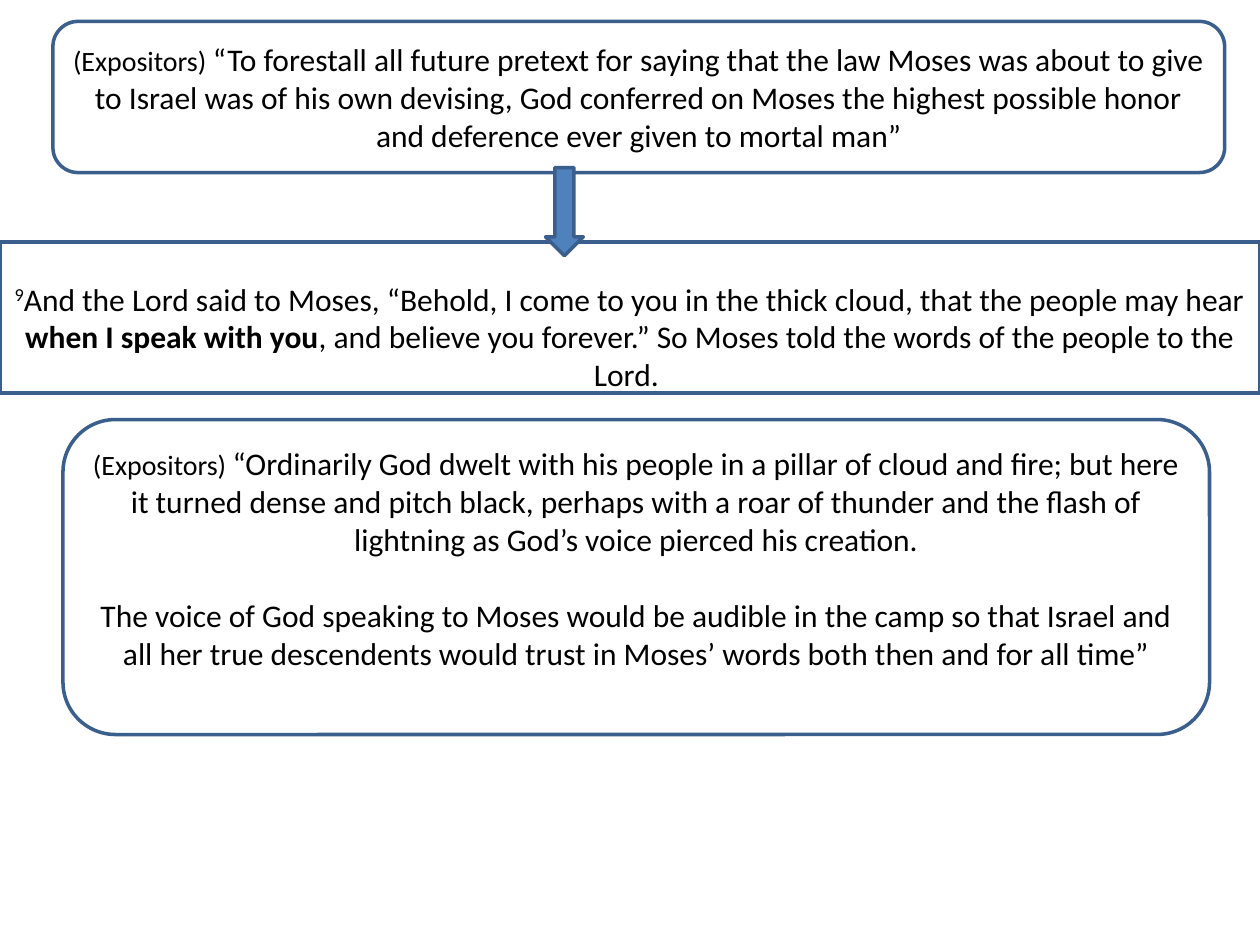
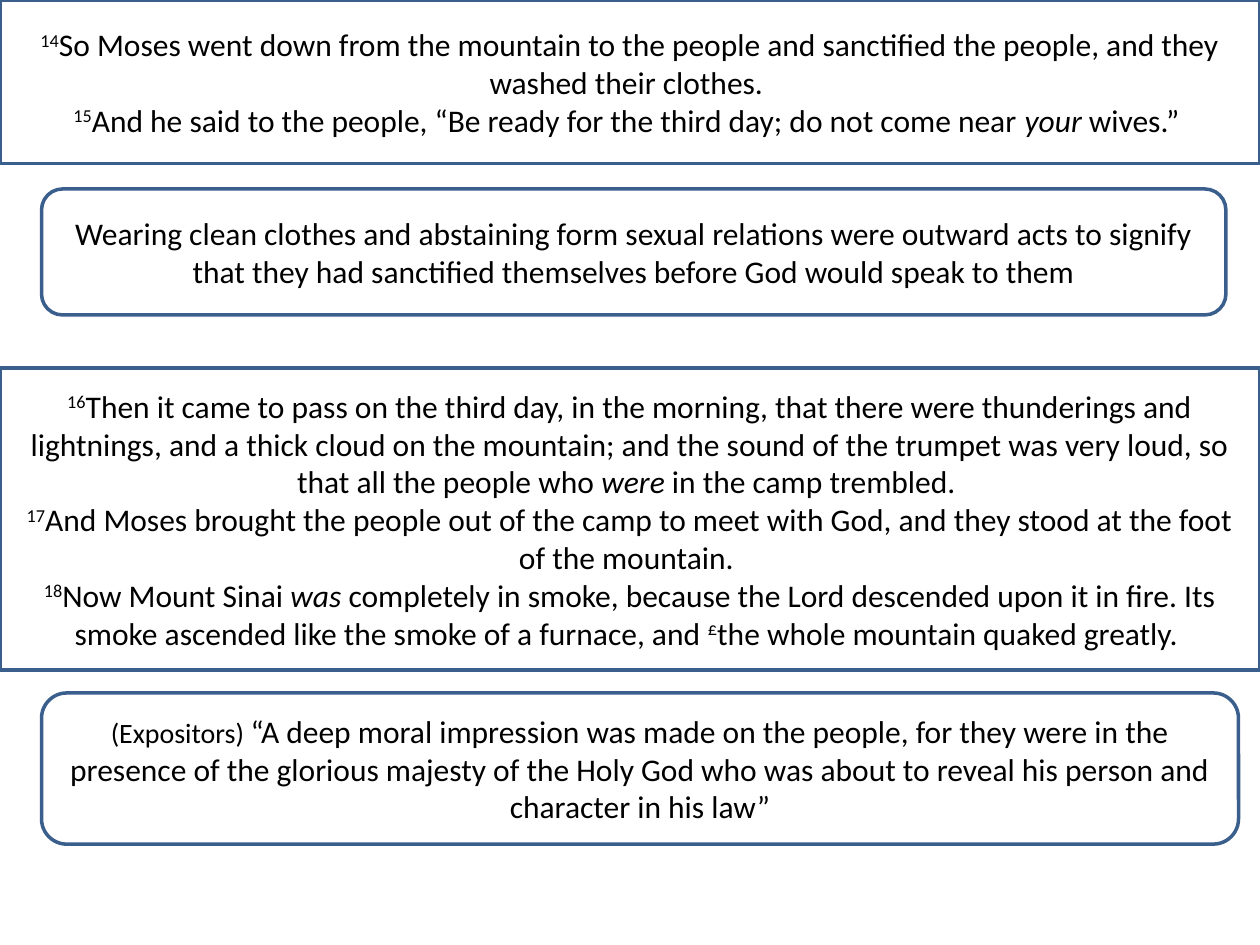
from pptx import Presentation
from pptx.dml.color import RGBColor
from pptx.enum.shapes import MSO_SHAPE
from pptx.enum.text import MSO_ANCHOR, PP_ALIGN
from pptx.util import Inches, Pt

RECTANGLE = MSO_SHAPE.RECTANGLE
ROUNDED = MSO_SHAPE.ROUNDED_RECTANGLE
DOWN_ARROW = MSO_SHAPE.DOWN_ARROW
CENTER = PP_ALIGN.CENTER
MIDDLE = MSO_ANCHOR.MIDDLE

WHITE = RGBColor(0xFF, 0xFF, 0xFF)
BLACK = RGBColor(0x00, 0x00, 0x00)
BLUE = RGBColor(0x4F, 0x81, 0xBD)
DARK_BLUE = RGBColor(0x3A, 0x5F, 0x8C)

PAGE_WIDTH, PAGE_HEIGHT = 10, 7.5
PARAGRAPH_GAP = Pt(22)

# Text styles: what each kind of span changes from the base format
BASE = {"name": "Calibri", "size": Pt(18)}
STYLES = {
    "plain": {},
    "bold": {"bold": True},
    "italic": {"italic": True},
    "source": {"size": Pt(16)},
    "raised": {},
}
RAISED_BASELINE = "30000"
EXPOSITORS = ("source", "(Expositors) ")

# Content: kind, (left, top, width, height), paragraphs of (style, text), insets
VERSE, COMMENT, ARROW = "verse", "comment", "arrow"
KINDS = {
    VERSE: (RECTANGLE, WHITE),
    COMMENT: (ROUNDED, WHITE),
    ARROW: (DOWN_ARROW, BLUE),
}

VOICE_PAGE = [
    (VERSE, (0, 1.92, PAGE_WIDTH, 1.2), [
        [("raised", "9"),
         ("plain", "And the Lord said to Moses, “Behold, I come to you in the thick cloud, "
                   "that the people may hear "),
         ("bold", "when I speak with you"),
         ("plain", ", and believe you forever.” So Moses told the words of the people "
                   "to the Lord. ")],
    ], {"margin_top": Inches(0.3), "margin_bottom": 0}),
    (COMMENT, (0.42, 0.17, 9.3, 1.2), [
        [EXPOSITORS,
         ("plain", "“To forestall all future pretext for saying that the law Moses was about "
                   "to give to Israel was of his own devising, God conferred on Moses the "
                   "highest possible honor and deference ever given to mortal man”")],
    ], {}),
    (ARROW, (4.33, 1.33, 0.3, 0.7), [], {}),
    (COMMENT, (0.5, 3.33, 9.1, 2.5), [
        [EXPOSITORS,
         ("plain", "“Ordinarily God dwelt with his people in a pillar of cloud and fire; but "
                   "here it turned dense and pitch black, perhaps with a roar of thunder and "
                   "the flash of lightning as God’s voice pierced his creation.")],
        [("plain", "The voice of God speaking to Moses would be audible in the camp so that "
                   "Israel and all her true descendents would trust in Moses’ words both then "
                   "and for all time”")],
    ], {"margin_bottom": Inches(0.35)}),
]

THIRD_DAY_PAGE = [
    (VERSE, (0, 0, PAGE_WIDTH, 1.3), [
        [("raised", "14"),
         ("plain", "So Moses went down from the mountain to the people and sanctified the "
                   "people, and they washed their clothes. ")],
        [("raised", "15"),
         ("plain", "And he said to the people, “Be ready for the third day; do not come near "),
         ("italic", "your"),
         ("plain", " wives.” ")],
    ], {}),
    (VERSE, (0, 2.92, PAGE_WIDTH, 2.4), [
        [("raised", "16"),
         ("plain", "Then it came to pass on the third day, in the morning, that there were "
                   "thunderings and lightnings, and a thick cloud on the mountain; and the "
                   "sound of the trumpet was very loud, so that all the people who "),
         ("italic", "were"),
         ("plain", " in the camp trembled. ")],
        [("raised", "17"),
         ("plain", "And Moses brought the people out of the camp to meet with God, and they "
                   "stood at the foot of the mountain. ")],
        [("raised", "18"),
         ("plain", "Now Mount Sinai "),
         ("italic", "was"),
         ("plain", " completely in smoke, because the Lord descended upon it in fire. Its "
                   "smoke ascended like the smoke of a furnace, and "),
         ("raised", "£"),
         ("plain", "the whole mountain quaked greatly. ")],
    ], {}),
    (COMMENT, (0.33, 1.5, 9.4, 1), [
        [("plain", "Wearing clean clothes and abstaining form sexual relations were outward "
                   "acts to signify that they had sanctified themselves before God would "
                   "speak to them")],
    ], {}),
    (COMMENT, (0.33, 5.5, 9.5, 1.2), [
        [EXPOSITORS,
         ("plain", "“A deep moral impression was made on the people, for they were in the "
                   "presence of the glorious majesty of the Holy God who was about to reveal "
                   "his person and character in his law”")],
    ], {}),
]


def add_span(para, style, text):
    span = para.add_run()
    span.text = text
    for name, value in (BASE | STYLES[style]).items():
        setattr(span.font, name, value)
    span.font.color.rgb = BLACK
    if style == "raised":
        span._r.get_or_add_rPr().set("baseline", RAISED_BASELINE)


def fill_text(frame, paragraphs, insets):
    for name, value in ({"word_wrap": True, "vertical_anchor": MIDDLE} | insets).items():
        setattr(frame, name, value)
    for index, spans in enumerate(paragraphs):
        para = frame.add_paragraph() if index else frame.paragraphs[0]
        para.alignment = CENTER
        # Verses run on; separate remarks are set apart
        if index and spans[0][0] != "raised":
            para.space_before = PARAGRAPH_GAP
        for style, text in spans:
            add_span(para, style, text)


def add_box(page, kind, place, paragraphs, insets):
    outline, fill = KINDS[kind]
    box = page.shapes.add_shape(outline, *map(Inches, place))
    box.shadow.inherit = False
    box.fill.solid()
    box.fill.fore_color.rgb = fill
    box.line.color.rgb = DARK_BLUE
    box.line.width = Pt(2)
    if paragraphs:
        fill_text(box.text_frame, paragraphs, insets)


def main():
    deck = Presentation()
    deck.slide_width, deck.slide_height = Inches(PAGE_WIDTH), Inches(PAGE_HEIGHT)
    blank = deck.slide_layouts[6]
    for boxes in (VOICE_PAGE, THIRD_DAY_PAGE):
        page = deck.slides.add_slide(blank)
        for box in boxes:
            add_box(page, *box)
    deck.save("out.pptx")


if __name__ == "__main__":
    main()
